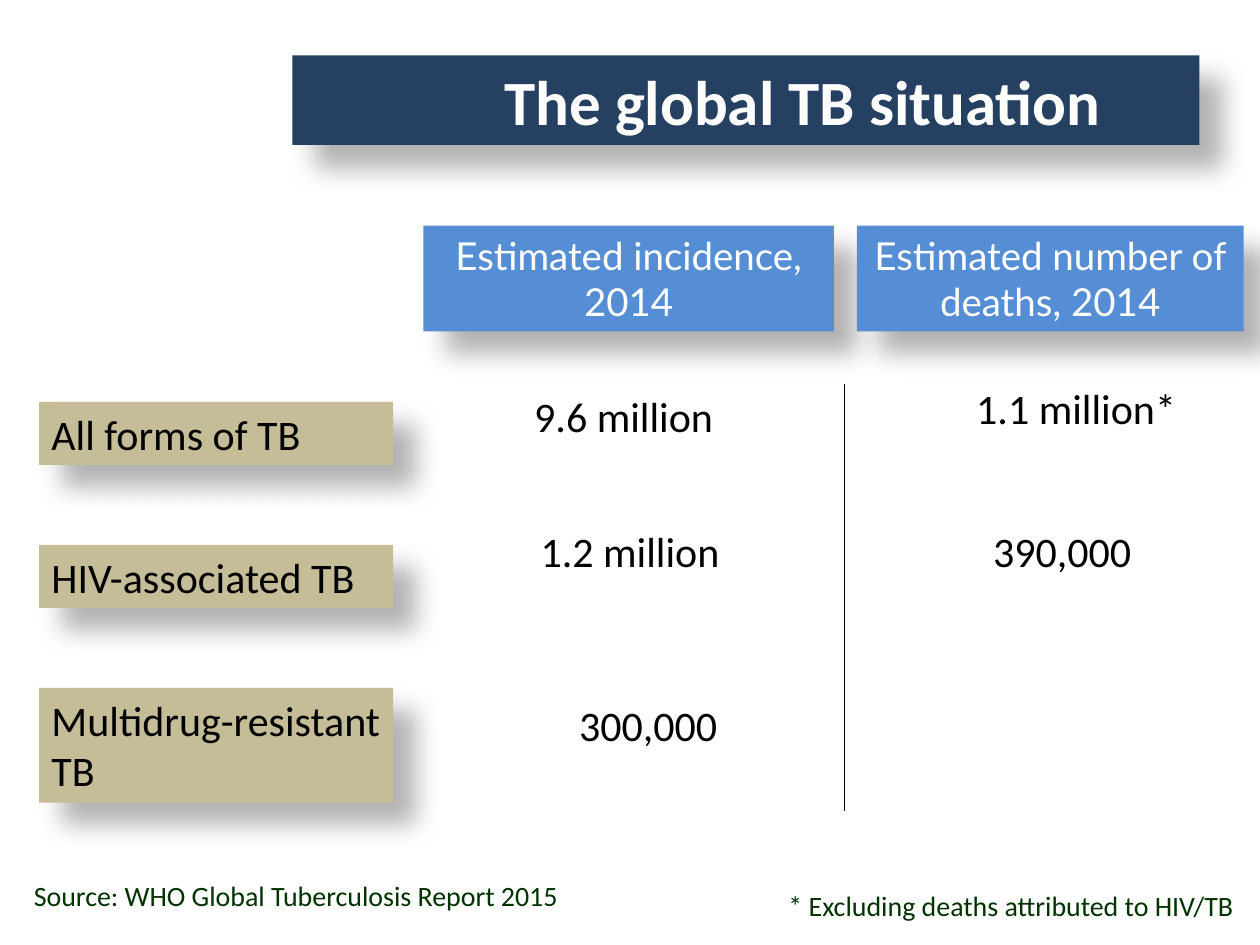
import pptx
import pptx.dml.color
import pptx.enum.shapes
import pptx.enum.text
import pptx.oxml
import pptx.oxml.ns
import pptx.util
from pptx.util import Inches

ALIGN = pptx.enum.text.PP_ALIGN
ANCHOR = pptx.enum.text.MSO_ANCHOR

THEME = {
    "navy": "254061", "blue": "558ED5", "tan": "C4BD97",
    "white": "FFFFFF", "black": "000000", "green": "003300",
    "font": "Calibri", "header_font": "Lato",
    "title": 36, "header": 22, "body": 24, "note": 16,
}

TITLE = "The global TB situation"
# text, left, width
HEADERS = [
    ("Estimated incidence, 2014", 3.36, 3.26),
    ("Estimated number of deaths, 2014", 6.8, 3.07),
]
# text, height
ROWS = [("All forms of TB", 0.5), ("HIV-associated TB", 0.5), ("Multidrug-resistant TB", 0.91)]
ROW_TOP, ROW_PITCH = 3.19, 1.135
# text, (left, top, width, height), extra left inset
FIGURES = [
    ("9.6 million", (3.43, 3.05, 3.04, 1.64), 0),
    ("1.1 million*", (6.92, 2.99, 2.95, 0.5), 0.29),
    ("1.2 million", (3.4, 4.12, 3.07, 0.91), 0.13),
    ("390,000", (6.92, 4.12, 3.02, 0.5), 0),
    ("300,000", (4.49, 5.5, 1.31, 0.5), 0),
]
NOTES = [
    ("Source: WHO Global Tuberculosis Report 2015", (0.17, 6.92, 9.83, 0.37), ALIGN.LEFT),
    ("* Excluding deaths attributed to HIV/TB", (0.83, 7, 9.06, 0.37), ALIGN.RIGHT),
]

SHADOW = (
    f'<a:effectLst {pptx.oxml.ns.nsdecls("a")}>'
    f'<a:outerShdw blurRad="{pptx.util.Pt(15)}" dist="{pptx.util.Pt(18)}" dir="2700000" '
    'algn="tl" rotWithShape="0"><a:srgbClr val="000000"><a:alpha val="30000"/></a:srgbClr>'
    '</a:outerShdw></a:effectLst>'
)


def color(name):
    return pptx.dml.color.RGBColor.from_string(THEME[name])


def write(shape, text, size="body", ink="black", font="font", bold=False,
          align=ALIGN.CENTER, anchor=ANCHOR.TOP, indent=0, wrap=True):
    frame = shape.text_frame
    frame.word_wrap = wrap
    frame.vertical_anchor = anchor
    frame.margin_left = Inches(0.1 + indent)
    paragraph = frame.paragraphs[0]
    paragraph.alignment = align
    run = paragraph.add_run()
    run.text = text
    run.font.name = THEME[font]
    run.font.size = pptx.util.Pt(THEME[size])
    run.font.bold = bold
    run.font.color.rgb = color(ink)


def add_label(slide, text, box, fill, **text_format):
    """Add a filled rectangle with a soft shadow and its text."""
    shape = slide.shapes.add_shape(
        pptx.enum.shapes.MSO_SHAPE.RECTANGLE, *map(Inches, box))
    shape.fill.solid()
    shape.fill.fore_color.rgb = color(fill)
    shape.line.fill.background()
    shape._element.spPr.append(pptx.oxml.parse_xml(SHADOW))
    write(shape, text, **text_format)


def add_text(slide, text, box, **text_format):
    write(slide.shapes.add_textbox(*map(Inches, box)), text, **text_format)


def add_divider(slide, x, top, bottom):
    divider = slide.shapes.add_connector(
        pptx.enum.shapes.MSO_CONNECTOR.STRAIGHT, *map(Inches, (x, top, x, bottom)))
    divider.line.color.rgb = color("black")
    divider.line.width = pptx.util.Pt(0.75)
    divider._element.spPr.append(
        pptx.oxml.parse_xml(f'<a:effectLst {pptx.oxml.ns.nsdecls("a")}/>'))


def main():
    presentation = pptx.Presentation()
    presentation.slide_width, presentation.slide_height = Inches(10), Inches(7.5)
    slide = presentation.slides.add_slide(presentation.slide_layouts[6])

    for text, left, width in HEADERS:
        add_label(slide, text, (left, 1.79, width, 0.84), "blue",
                  size="header", ink="white", font="header_font")
    for index, (text, height) in enumerate(ROWS):
        top = ROW_TOP + index * ROW_PITCH
        add_label(slide, text, (0.31, top, 2.81, height), "tan", align=ALIGN.LEFT)
    for text, box, indent in FIGURES:
        add_text(slide, text, box, indent=indent)
    add_divider(slide, 6.7, 3.05, 6.44)
    for text, box, align in NOTES:
        add_text(slide, text, box, size="note", ink="green", align=align)
    add_label(slide, TITLE, (2.32, 0.44, 7.2, 0.71), "navy", size="title", ink="white",
              bold=True, anchor=ANCHOR.MIDDLE, indent=0.9)

    presentation.save("out.pptx")


if __name__ == "__main__":
    main()
